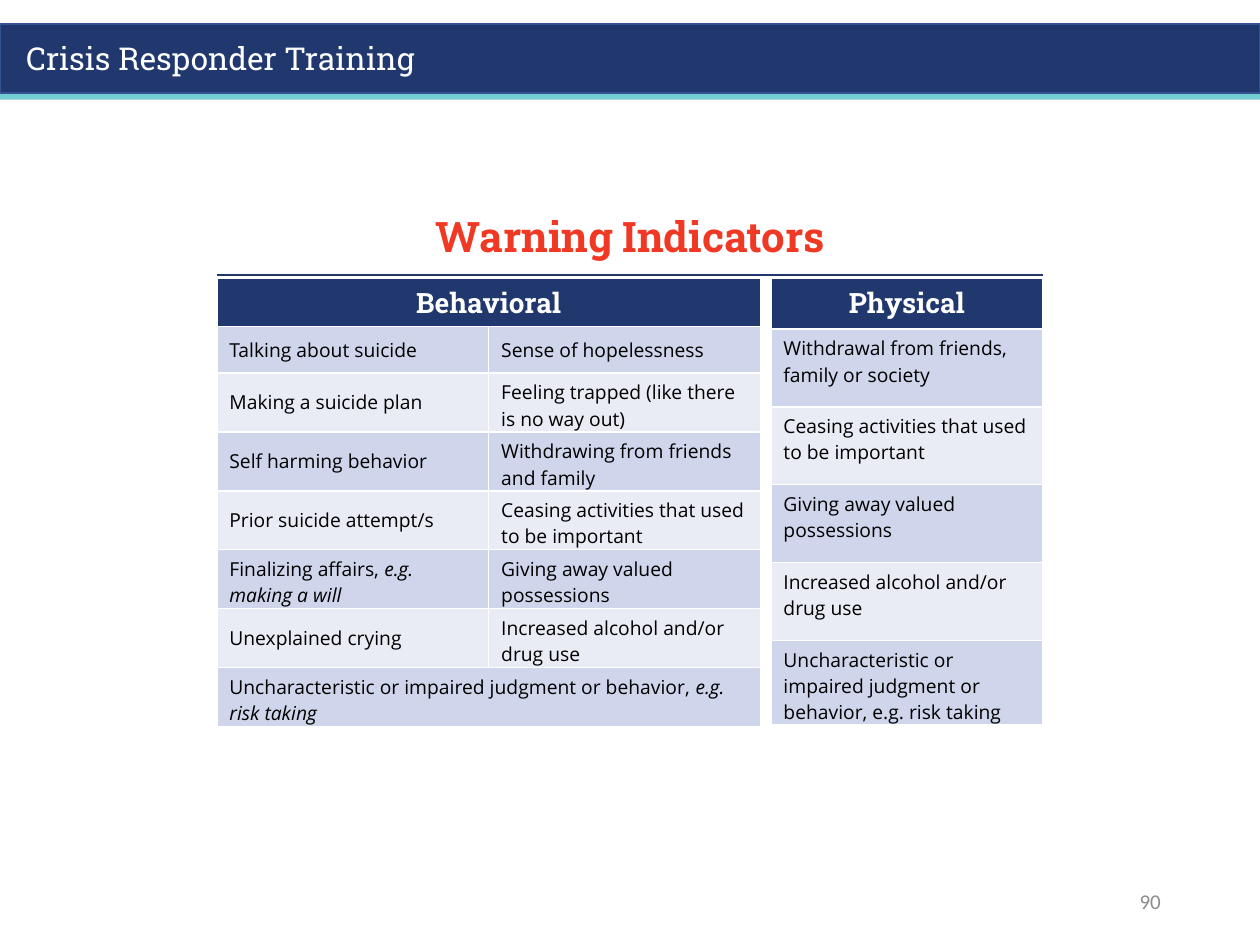
"""Build the Warning Indicators slide with its behavioral and physical tables."""
from dataclasses import dataclass

from pptx import Presentation
from pptx.dml.color import RGBColor
from pptx.enum.shapes import MSO_CONNECTOR, MSO_SHAPE
from pptx.enum.text import MSO_ANCHOR, PP_ALIGN
from pptx.oxml.ns import qn
from pptx.util import Cm, Pt
from lxml.etree import SubElement


@dataclass(frozen=True)
class Theme:
    navy: str = "20386D"
    outline: str = "325491"
    teal: str = "72CCD2"
    red: str = "EF3925"
    gray: str = "8C8C8C"
    white: str = "FFFFFF"
    black: str = "000000"
    bands: tuple = ("CFD5EA", "E9EBF5")
    slab: str = "Roboto Slab"
    sans: str = "Open Sans"
    plain: str = "Calibri"
    title: int = 24
    banner: int = 18
    header: int = 16
    number: int = 12
    body: int = 11


theme = Theme()


def write(frame, text, *, font, size, color, bold=False, align=PP_ALIGN.LEFT,
          anchor=MSO_ANCHOR.TOP, spacing=None):
    """Fill a text frame, setting the parts between asterisks in italics."""
    frame.word_wrap = True
    frame.vertical_anchor = anchor
    para = frame.paragraphs[0]
    para.alignment = align
    para.line_spacing = spacing
    for index, part in enumerate(text.split("*")):
        if part:
            span = para.add_run()
            span.text = part
            span.font.name = font
            span.font.size = Pt(size)
            span.font.bold = bold
            span.font.italic = index % 2 == 1
            span.font.color.rgb = RGBColor.from_string(color)


deck = Presentation()
deck.slide_width, deck.slide_height = Cm(25.4), Cm(19.05)
page = deck.slides.add_slide(deck.slide_layouts[6])

for top, height, fill, outline in ((1.22, 0.79, theme.teal, None),
                                   (0.48, 1.4, theme.navy, theme.outline)):
    band = page.shapes.add_shape(MSO_SHAPE.RECTANGLE, 0, Cm(top), deck.slide_width, Cm(height))
    band.shadow.inherit = False
    band.fill.solid()
    band.fill.fore_color.rgb = RGBColor.from_string(fill)
    if outline:
        band.line.color.rgb = RGBColor.from_string(outline)
        band.line.width = Pt(1)
    else:
        band.line.fill.background()

labels = (
    ("Crisis Responder Training", (0.28, 0.66, 9.4, 1.02),
     dict(font=theme.slab, size=theme.banner, color=theme.white)),
    ("Warning Indicators", (1.75, 4.24, 21.9, 0.97),
     dict(font=theme.slab, size=theme.title, color=theme.red, bold=True,
          align=PP_ALIGN.CENTER, spacing=0.9)),
    ("90", (17.93, 17.65, 5.72, 1.02),
     dict(font=theme.plain, size=theme.number, color=theme.gray,
          align=PP_ALIGN.RIGHT, anchor=MSO_ANCHOR.MIDDLE)),
)
for text, place, style in labels:
    box = page.shapes.add_textbox(*map(Cm, place))
    write(box.text_frame, text, **style)

rule = page.shapes.add_connector(MSO_CONNECTOR.STRAIGHT, Cm(4.37), Cm(5.54), Cm(21.03), Cm(5.54))
rule.line.color.rgb = RGBColor.from_string(theme.navy)
rule.line.width = Pt(1.5)
SubElement(rule._element.spPr, qn("a:effectLst"))

behavioral = (
    ("Behavioral",),
    ("Talking about suicide", "Sense of hopelessness"),
    ("Making a suicide plan", "Feeling trapped (like there is no way out)"),
    ("Self harming behavior", "Withdrawing from friends and family"),
    ("Prior suicide attempt/s", "Ceasing activities that used to be important"),
    ("Finalizing affairs, *e.g. making a will*", "Giving away valued possessions"),
    ("Unexplained crying", "Increased alcohol and/or drug use"),
    ("Uncharacteristic or impaired judgment or behavior, *e.g. risk taking*",),
)
physical = (
    ("Physical",),
    ("Withdrawal from friends, family or society",),
    ("Ceasing activities that used to be important",),
    ("Giving away valued possessions",),
    ("Increased alcohol and/or drug use",),
    ("Uncharacteristic or impaired judgment or behavior, e.g. risk taking",),
)
column_width, table_height = Cm(5.48), Cm(9.02)
tables = (
    (behavioral, 2, 4.37, [0.97] + [0.94] * 7, MSO_ANCHOR.MIDDLE),
    (physical, 1, 15.54, [1.02] + [1.57] * 4 + [1.7], MSO_ANCHOR.TOP),
)
for rows, columns, left, heights, anchor in tables:
    holder = page.shapes.add_table(len(rows), columns, Cm(left), Cm(5.61),
                                   column_width * columns, table_height)
    grid = holder.table
    for number, (texts, height) in enumerate(zip(rows, heights)):
        grid.rows[number].height = Cm(height)
        if len(texts) < columns:
            grid.cell(number, 0).merge(grid.cell(number, columns - 1))
        if number == 0:
            fill = theme.navy
            style = dict(font=theme.slab, size=theme.header, color=theme.white,
                         bold=True, align=PP_ALIGN.CENTER)
        else:
            fill = theme.bands[(number - 1) % 2]
            style = dict(font=theme.sans, size=theme.body, color=theme.black)
        for column, text in enumerate(texts):
            cell = grid.cell(number, column)
            cell.fill.solid()
            cell.fill.fore_color.rgb = RGBColor.from_string(fill)
            write(cell.text_frame, text, **style)
            cell.vertical_anchor = anchor
    holder.height = table_height

deck.save("out.pptx")
